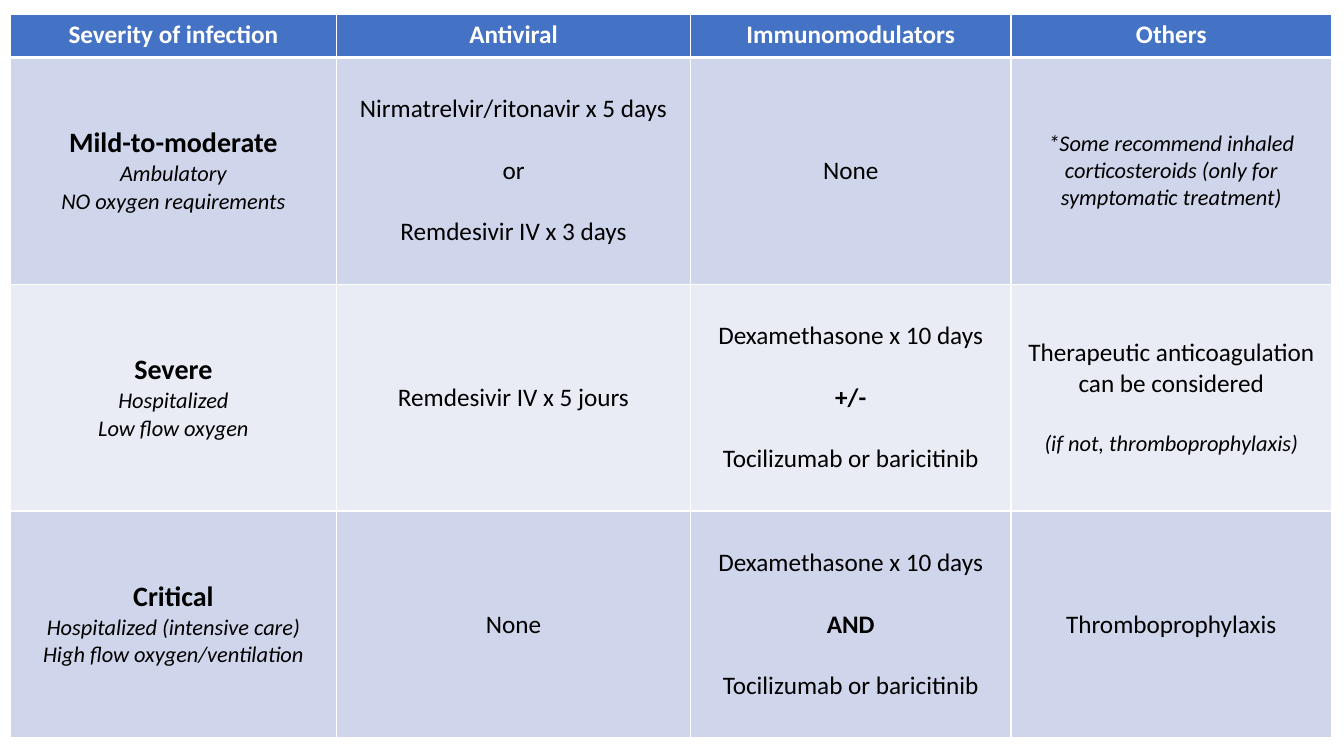
from dataclasses import dataclass

from lxml import etree
from pptx import Presentation
from pptx.dml.color import RGBColor
from pptx.enum.text import MSO_ANCHOR, PP_ALIGN
from pptx.oxml.ns import qn
from pptx.table import _Cell
from pptx.util import Pt

CENTER = PP_ALIGN.CENTER
MIDDLE = MSO_ANCHOR.MIDDLE
TOP = MSO_ANCHOR.TOP

FONT = "Calibri"
WHITE, BLACK = "FFFFFF", "000000"
BLUE, DARK, LIGHT = "4472C4", "CFD5EA", "E9EBF5"
GAP = 22  # one 18 pt line
THIN, THICK = 1, 3

LEFT, TOP_EDGE = 7.2, 10
WIDTHS = (233.3, 252.7, 229, 229)
HEIGHTS = (31, 162, 162, 162)

HEAD = {"size": Pt(18), "bold": True, "italic": False}
LEVEL = {"size": Pt(20), "bold": True, "italic": False}
NOTE = {"size": Pt(16), "bold": False, "italic": True}
PLAIN = {"size": Pt(18), "bold": False, "italic": False}


@dataclass(frozen=True)
class Line:
    text: str
    style: dict
    gap: float = 0


@dataclass(frozen=True)
class Row:
    fill: str
    color: str
    anchor: MSO_ANCHOR
    cells: list[list[Line]]


def color(code: str) -> RGBColor:
    return RGBColor.from_string(code)


def level(name: str, *notes: str) -> list[Line]:
    return [Line(name, LEVEL)] + [Line(note, NOTE) for note in notes]


def plain(text: str) -> list[Line]:
    return [Line(text, PLAIN)]


def pair(first: str, link: str, last: str, style: dict) -> list[Line]:
    """Two drugs with a linking word spaced out between them."""
    return [Line(first, PLAIN), Line(link, style, GAP), Line(last, PLAIN, GAP)]


def steroid(link: str) -> list[Line]:
    return pair("Dexamethasone x 10 days", link, "Tocilizumab or baricitinib", HEAD)


TITLES = ("Severity of infection", "Antiviral", "Immunomodulators", "Others")
ROWS = [
    Row(BLUE, WHITE, TOP, [[Line(title, HEAD)] for title in TITLES]),
    Row(DARK, BLACK, MIDDLE, [
        level("Mild-to-moderate", "Ambulatory", "NO oxygen requirements"),
        pair("Nirmatrelvir/ritonavir x 5 days", "or", "Remdesivir IV x 3 days", PLAIN),
        plain("None"),
        [Line("*Some recommend inhaled corticosteroids "
              "(only for symptomatic treatment)", NOTE)],
    ]),
    Row(LIGHT, BLACK, MIDDLE, [
        level("Severe", "Hospitalized", "Low flow oxygen"),
        plain("Remdesivir IV x 5 jours"),
        steroid("+/-"),
        [Line("Therapeutic anticoagulation can be considered", PLAIN),
         Line("(if not, thromboprophylaxis)", NOTE, GAP)],
    ]),
    Row(DARK, BLACK, MIDDLE, [
        level("Critical", "Hospitalized (intensive care)",
              "High flow oxygen/ventilation"),
        plain("None"),
        steroid("AND"),
        plain("Thromboprophylaxis"),
    ]),
]


def border(cell: _Cell, top: float, bottom: float) -> None:
    props = cell._tc.get_or_add_tcPr()
    sides = {"lnL": THIN, "lnR": THIN, "lnT": top, "lnB": bottom}
    for side, width in sides.items():
        line = etree.SubElement(props, qn(f"a:{side}"), w=str(Pt(width)))
        fill = etree.SubElement(line, qn("a:solidFill"))
        etree.SubElement(fill, qn("a:srgbClr"), val=WHITE)


def write(cell: _Cell, lines: list[Line], ink: str) -> None:
    frame = cell.text_frame
    for i, line in enumerate(lines):
        para = frame.add_paragraph() if i else frame.paragraphs[0]
        para.alignment = CENTER
        if line.gap:
            para.space_before = Pt(line.gap)
        run = para.add_run()
        run.text = line.text
        run.font.name = FONT
        run.font.color.rgb = color(ink)
        for key, value in line.style.items():
            setattr(run.font, key, value)


def main() -> None:
    deck = Presentation()
    deck.slide_width, deck.slide_height = Pt(960), Pt(540)
    slide = deck.slides.add_slide(deck.slide_layouts[6])
    table = slide.shapes.add_table(
        len(ROWS), len(WIDTHS), Pt(LEFT), Pt(TOP_EDGE),
        Pt(sum(WIDTHS)), Pt(sum(HEIGHTS))).table
    for column, width in zip(table.columns, WIDTHS):
        column.width = Pt(width)
    for i, (row, height) in enumerate(zip(ROWS, HEIGHTS)):
        table.rows[i].height = Pt(height)
        for j, lines in enumerate(row.cells):
            cell = table.cell(i, j)
            border(cell, THICK if i == 1 else THIN, THICK if i == 0 else THIN)
            cell.fill.solid()
            cell.fill.fore_color.rgb = color(row.fill)
            cell.vertical_anchor = row.anchor
            write(cell, lines, row.color)
    deck.save("out.pptx")


if __name__ == "__main__":
    main()
